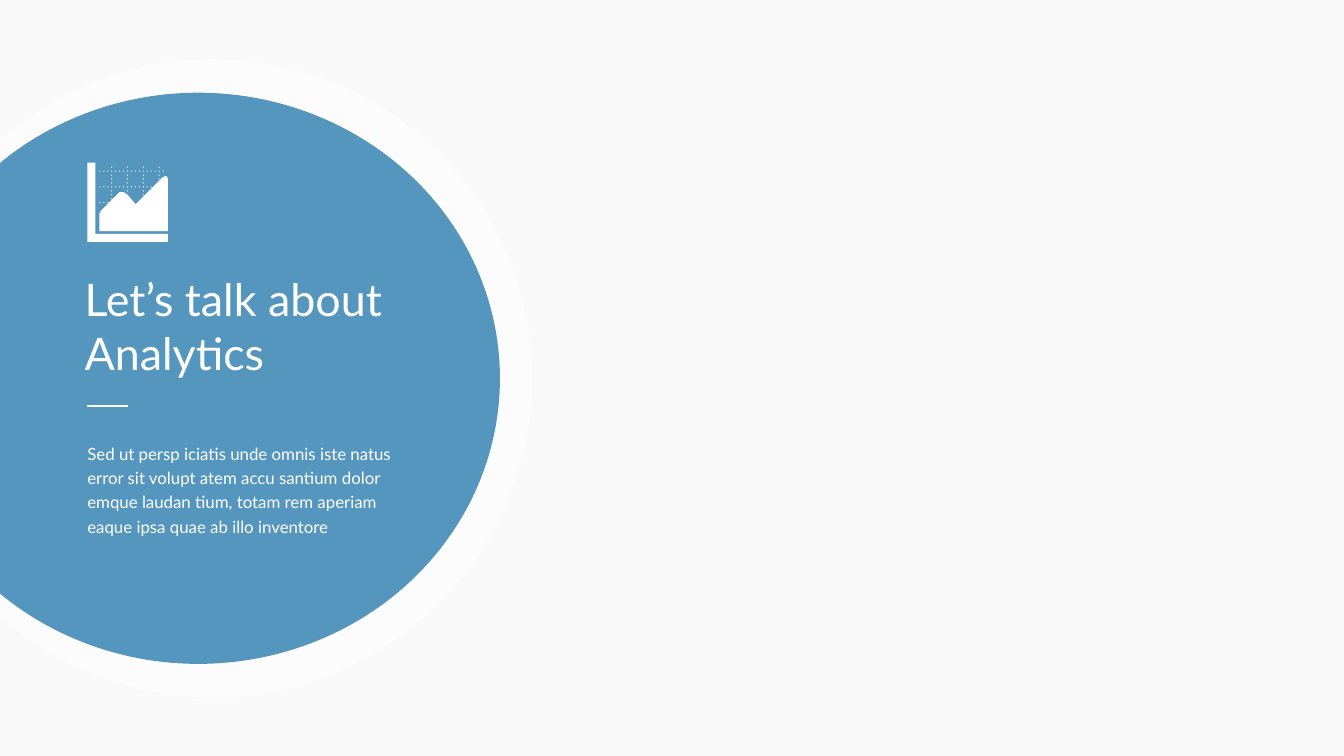
from lxml.etree import SubElement
from pptx import Presentation
from pptx.dml.color import RGBColor as Rgb
from pptx.enum.shapes import MSO_CONNECTOR as Link, MSO_SHAPE as Kind
from pptx.enum.text import MSO_ANCHOR as Anchor, MSO_AUTO_SIZE as Fit, PP_ALIGN as Align
from pptx.oxml.ns import qn
from pptx.util import Inches, Pt

THEME = {
    "font": "Lato", "page": "F9F9F9", "disc": "5596BE", "white": "FFFFFF",
    "title": 24, "body": 9, "lead": 13, "after": 12, "rule": 0.75,
}
WIDE = 10
TITLE = "Let’s talk about Analytics"
BODY = ("Sed ut persp iciatis unde omnis iste natus error sit volupt atem accu santium "
        "dolor emque laudan tium, totam rem aperiam eaque ipsa quae ab illo inventore")
DISCS = [
    {"box": (-0.79, 0.44, 4.75, 4.75), "cut": (136.67, 79.31), "color": "white", "alpha": 60},
    {"box": (-0.77, 0.69, 4.49, 4.25), "cut": (136.27, 79.88), "color": "disc", "alpha": 100},
]
AXES = [(0.65, 1.8), (0.65, 1.21), (0.71, 1.21), (0.71, 1.74), (1.25, 1.74), (1.25, 1.8)]
AREA = [(0.74, 1.72), (0.74, 1.59), (0.75, 1.57), (0.89, 1.43), (0.91, 1.43), (0.92, 1.43),
        (0.95, 1.45), (1.01, 1.52), (1.21, 1.32), (1.23, 1.31), (1.24, 1.31), (1.25, 1.33),
        (1.25, 1.72)]
GRID = {"left": 0.74, "top": 1.24, "step": 0.47 / 16,
        "rows": {1: 17, 5: 14, 9: 3}, "cols": {3: 9, 7: 7, 11: 8, 15: 4}}


def paint(fill, name):
    fill.solid()
    fill.fore_color.rgb = Rgb.from_string(THEME[name])


def add_disc(box, cut, color, alpha):
    disc = slide.shapes.add_shape(Kind.CHORD, *map(Inches, box))
    disc.adjustments[0], disc.adjustments[1] = cut
    disc.shadow.inherit = False
    disc.line.fill.background()
    paint(disc.fill, color)
    if alpha < 100:
        tone = disc.fill._xPr.find(qn("a:solidFill"))[0]
        SubElement(tone, qn("a:alpha"), val=str(alpha * 1000))


def grid_dots():
    step = GRID["step"]
    size = step / 4
    cells = {(col, row) for row, count in GRID["rows"].items() for col in range(count)}
    cells |= {(col, row) for col, count in GRID["cols"].items() for row in range(count)}
    for col, row in sorted(cells):
        x, y = GRID["left"] + col * step, GRID["top"] + row * step
        yield [(x, y), (x + size, y), (x + size, y + size), (x, y + size)]


def add_icon(loops):
    pen = None
    for loop in loops:
        start, *rest = [(Inches(x), Inches(y)) for x, y in loop]
        if pen is None:
            pen = slide.shapes.build_freeform(*start)
        else:
            pen.move_to(*start)
        pen.add_line_segments(rest, close=True)
    icon = pen.convert_to_shape()
    icon.shadow.inherit = False
    icon.line.fill.background()
    paint(icon.fill, "white")


def put_text(holder, text, box, size, lead=None, after=0):
    slide.shapes._spTree.append(holder._element)
    holder.left, holder.top, holder.width, holder.height = map(Inches, box)
    frame = holder.text_frame
    frame.text = text
    frame.word_wrap, frame.auto_size = True, Fit.NONE
    frame.vertical_anchor = Anchor.TOP
    frame.margin_left = frame.margin_top = frame.margin_right = frame.margin_bottom = 0
    para = frame.paragraphs[0]
    para.alignment = Align.LEFT
    para.space_before, para.space_after = Pt(0), Pt(after)
    if lead:
        para.line_spacing = Pt(lead)
    props = para._p.get_or_add_pPr()
    props.set("marL", "0")
    props.set("indent", "0")
    SubElement(props, qn("a:buNone"))
    font = para.runs[0].font
    font.name, font.size = THEME["font"], Pt(size)
    font.color.rgb = Rgb.from_string(THEME["white"])


def add_rule(x, y, end):
    rule = slide.shapes.add_connector(Link.STRAIGHT, Inches(x), Inches(y), Inches(end), Inches(y))
    rule.line.width = Pt(THEME["rule"])
    paint(rule.line.fill, "white")
    SubElement(rule._element.spPr, qn("a:effectLst"))


deck = Presentation()
deck.slide_width, deck.slide_height = Inches(WIDE), Inches(WIDE * 9 / 16)
slide = deck.slides.add_slide(deck.slide_layouts[1])
paint(slide.background.fill, "page")

for disc in DISCS:
    add_disc(**disc)
put_text(slide.shapes.title, TITLE, (0.63, 2.02, 2.3, 0.86), THEME["title"])
add_icon([AXES, AREA, *grid_dots()])
put_text(slide.placeholders[1], BODY, (0.65, 3.27, 2.26, 0.71), THEME["body"],
         lead=THEME["lead"], after=THEME["after"])
add_rule(0.65, 3.02, 0.95)
deck.save("out.pptx")
